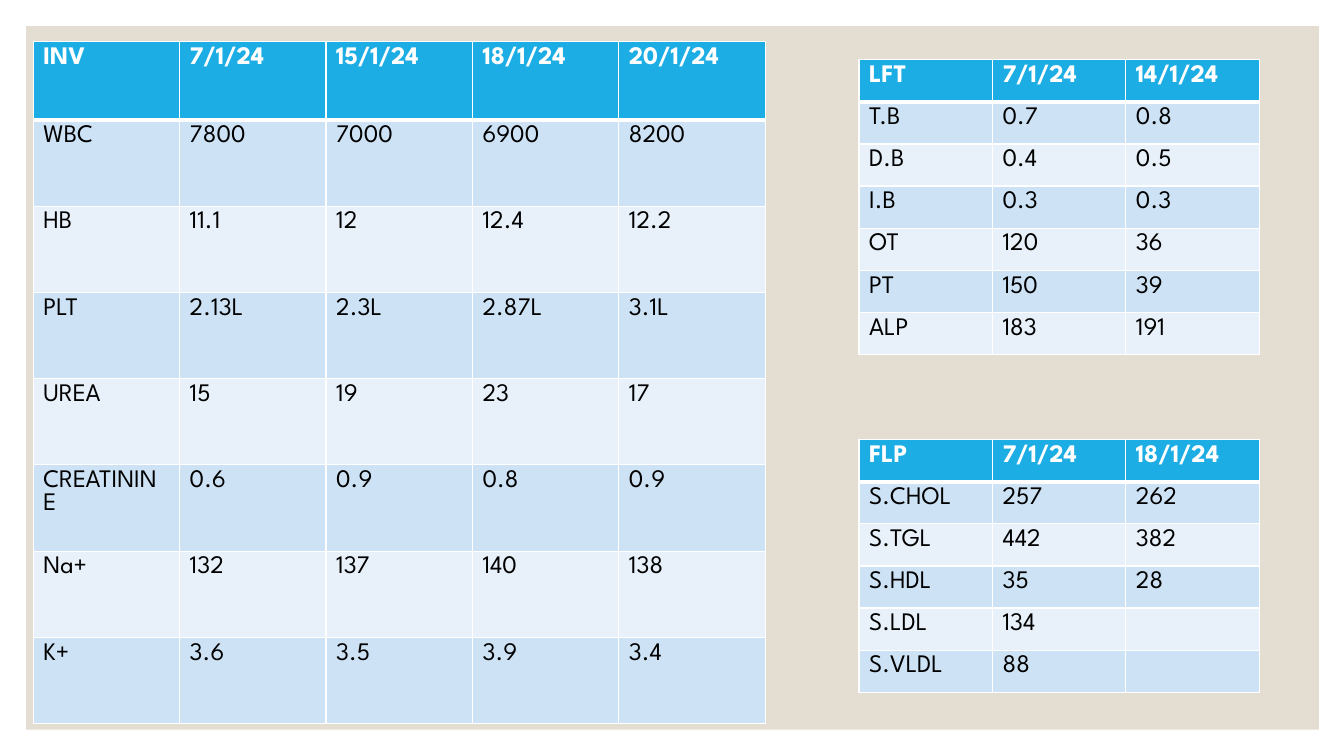
from lxml import etree
from pptx import Presentation
from pptx.dml.color import RGBColor
from pptx.enum.shapes import MSO_SHAPE
from pptx.oxml.ns import qn
from pptx.util import Inches, Pt

RECTANGLE = MSO_SHAPE.RECTANGLE
FONT = "League Spartan"
COLORS = {
    "panel": "E3DED1",
    "header": "1CADE4",
    "band_dark": "CDE3F5",
    "band_light": "E8F1FA",
    "white": "FFFFFF",
    "text": "000000",
}

BLOOD = [
    ["INV", "7/1/24", "15/1/24", "18/1/24", "20/1/24"],
    ["WBC", "7800", "7000", "6900", "8200"],
    ["HB", "11.1", "12", "12.4", "12.2"],
    ["PLT", "2.13L", "2.3L", "2.87L", "3.1L"],
    ["UREA", "15", "19", "23", "17"],
    ["CREATININE", "0.6", "0.9", "0.8", "0.9"],
    ["Na+", "132", "137", "140", "138"],
    ["K+", "3.6", "3.5", "3.9", "3.4"],
]
LIVER = [
    ["LFT", "7/1/24", "14/1/24"],
    ["T.B", "0.7", "0.8"],
    ["D.B", "0.4", "0.5"],
    ["I.B", "0.3", "0.3"],
    ["OT", "120", "36"],
    ["PT", "150", "39"],
    ["ALP", "183", "191"],
]
LIPIDS = [
    ["FLP", "7/1/24", "18/1/24"],
    ["S.CHOL", "257", "262"],
    ["S.TGL", "442", "382"],
    ["S.HDL", "35", "28"],
    ["S.LDL", "134", ""],
    ["S.VLDL", "88", ""],
]


def rgb(name):
    return RGBColor.from_string(COLORS[name])


def set_borders(cell, top, bottom):
    tc_pr = cell._tc.get_or_add_tcPr()
    widths = {"a:lnL": 1, "a:lnR": 1, "a:lnT": top, "a:lnB": bottom}
    for tag, width in widths.items():
        ln = etree.SubElement(tc_pr, qn(tag), w=str(Pt(width)))
        fill = etree.SubElement(ln, qn("a:solidFill"))
        etree.SubElement(fill, qn("a:srgbClr"), val=COLORS["white"])


def fill_cell(cell, text, row):
    header = row == 0
    band = "band_dark" if row % 2 else "band_light"
    set_borders(cell, 3 if row == 1 else 1, 3 if header else 1)
    cell.fill.solid()
    cell.fill.fore_color.rgb = rgb("header" if header else band)
    cell.text = text
    font = cell.text_frame.paragraphs[0].font
    font.name = FONT
    font.size = Pt(18)
    font.bold = header
    font.color.rgb = rgb("white" if header else "text")


def add_results(slide, rows, left, top, width, height, header_height):
    count = len(rows[0])
    table = slide.shapes.add_table(
        len(rows), count, Inches(left), Inches(top), Inches(width), Inches(height)
    ).table
    for column in table.columns:
        column.width = Inches(width / count)
    body_height = (height - header_height) / (len(rows) - 1)
    for i, values in enumerate(rows):
        table.rows[i].height = Inches(body_height if i else header_height)
        for j, text in enumerate(values):
            fill_cell(table.cell(i, j), text, i)


def add_panel(slide, left, top, width, height):
    sp = slide.shapes.add_shape(
        RECTANGLE, Inches(left), Inches(top), Inches(width), Inches(height)
    )
    sp.shadow.inherit = False
    sp.fill.solid()
    sp.fill.fore_color.rgb = rgb("panel")
    sp.line.fill.background()


def main():
    prs = Presentation()
    prs.slide_width, prs.slide_height = Inches(13.33), Inches(7.5)
    slide = prs.slides.add_slide(prs.slide_layouts[6])
    add_panel(slide, 0.26, 0.26, 12.82, 6.98)
    add_results(slide, BLOOD, 0.33, 0.41, 7.26, 6.77, 0.78)
    add_results(slide, LIVER, 8.52, 0.59, 3.97, 2.93, 0.42)
    add_results(slide, LIPIDS, 8.52, 4.36, 3.97, 2.51, 0.42)
    prs.save("out.pptx")


if __name__ == "__main__":
    main()
